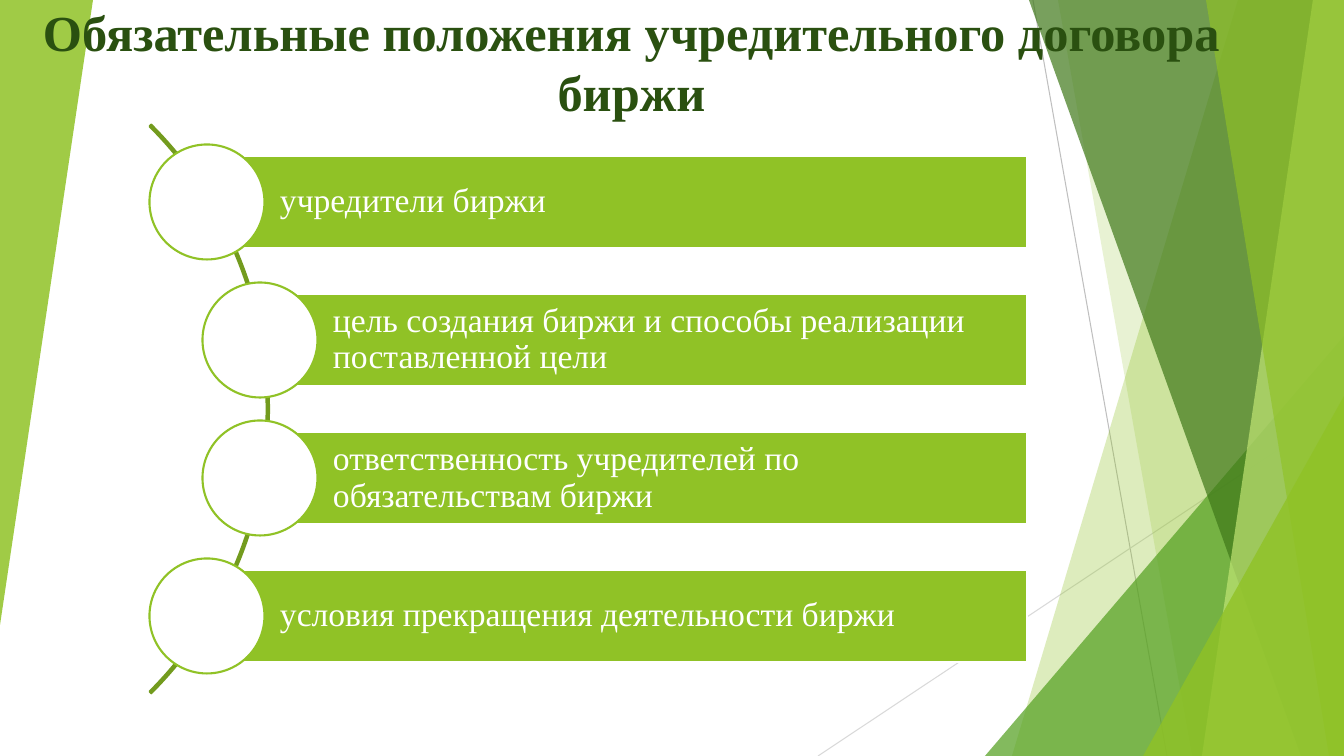
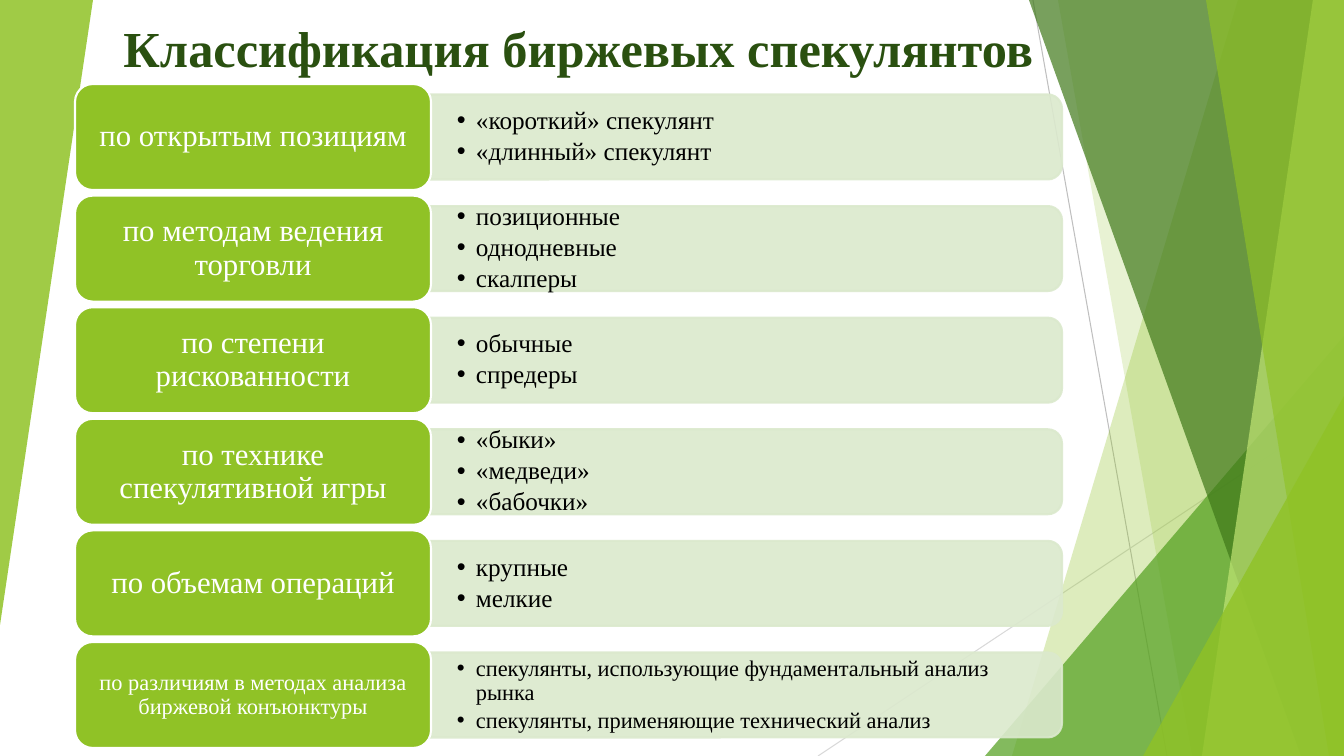
from lxml import etree
from pptx import Presentation
from pptx.dml.color import RGBColor
from pptx.enum import shapes, text
from pptx.oxml.ns import qn
from pptx.util import Emu, Pt

SCALE = 914400 / 100.8
WIDTH, HEIGHT = 1344, 756
FONT = "Times New Roman"
WHITE, BLACK, LIME, OLIVE = "FFFFFF", "000000", "90C226", "739B1E"
TITLE_GREEN, PALE_GREEN = "2A5010", "DBE9CD"
GUIDES = [(1033, 0, 1167, HEIGHT, "BFBFBF"), (WIDTH, 406, 818, HEIGHT, "D9D9D9")]
PANES_BACK = [(1238, 1012, LIME, 30), (1058, 1192, LIME, 20)]
PANES_FRONT = [(1029, 1301, "3F7819", 70), (1313, 1202, "C0E474", 70), (1206, 1329, LIME, 65)]
PROVISIONS = [
    (207, "учредители биржи"),
    (260, "цель создания биржи и способы реализации поставленной цели"),
    (260, "ответственность учредителей по обязательствам биржи"),
    (207, "условия прекращения деятельности биржи"),
]
SPECULATORS = [
    ("по открытым позициям", ["«короткий» спекулянт", "«длинный» спекулянт"], 22, 18),
    ("по методам ведения торговли", ["позиционные", "однодневные", "скалперы"], 22, 18),
    ("по степени рискованности", ["обычные", "спредеры"], 22, 18),
    ("по технике спекулятивной игры", ["«быки»", "«медведи»", "«бабочки»"], 22, 18),
    ("по объемам операций", ["крупные", "мелкие"], 22, 18),
    ("по различиям в методах анализа биржевой конъюнктуры",
     ["спекулянты, использующие фундаментальный анализ рынка",
      "спекулянты, применяющие технический анализ"], 16, 16),
]


def px(length):
    """Turn pixels into EMU."""
    return Emu(round(length * SCALE))


def colour(hex_string):
    """Turn a hex string into a colour."""
    return RGBColor.from_string(hex_string)


def apply(target, formats):
    """Set every attribute named in a dict of format values."""
    for name, value in formats.items():
        setattr(target, name, value)


def paint(fill, hex_string, opacity=100):
    """Fill with one colour at an opacity in percent, or with nothing."""
    if hex_string is None:
        fill.background()
        return
    fill.solid()
    fill.fore_color.rgb = colour(hex_string)
    if opacity < 100:
        tint = fill._xPr.find(qn("a:solidFill"))[0]
        etree.SubElement(tint, qn("a:alpha"), val=str(opacity * 1000))


def style(shape, fill, line=None, opacity=100):
    """Give a shape its fill and outline and no shadow."""
    shape.shadow.inherit = False
    paint(shape.fill, fill, opacity)
    paint(shape.line.fill, line, opacity)
    if line:
        shape.line.width = Pt(1.5)
    return shape


def add_figure(slide, kind, box, fill, line=None, opacity=100, adjustments=()):
    """Add a preset shape in a pixel box."""
    shape = slide.shapes.add_shape(kind, *map(px, box))
    for index, value in enumerate(adjustments):
        shape.adjustments[index] = value
    return style(shape, fill, line, opacity)


def add_bullet(paragraph, indent):
    """Give a paragraph a hanging round bullet."""
    properties = paragraph._p.get_or_add_pPr()
    properties.set("marL", str(px(indent)))
    properties.set("indent", str(-px(indent)))
    etree.SubElement(properties, qn("a:buFont"), typeface="Arial")
    etree.SubElement(properties, qn("a:buChar"), char="•")


def write(shape, lines, size, ink, insets, align=text.PP_ALIGN.LEFT, spacing=0.9,
          anchor=text.MSO_ANCHOR.MIDDLE, bold=False, bullets=False):
    """Write paragraphs into a shape; insets are left, top, right, bottom."""
    frame = shape.text_frame
    left, top, right, bottom = map(px, insets)
    apply(frame, {"word_wrap": True, "vertical_anchor": anchor, "margin_left": left,
                  "margin_top": top, "margin_right": right, "margin_bottom": bottom})
    for index, line in enumerate(lines):
        paragraph = frame.add_paragraph() if index else frame.paragraphs[0]
        apply(paragraph, {"alignment": align, "line_spacing": spacing})
        if bullets:
            paragraph.space_after = Pt(round(size * 0.15, 1))
            add_bullet(paragraph, 19)
        run = paragraph.add_run()
        run.text = line
        apply(run.font, {"name": FONT, "size": Pt(size), "bold": bold})
        run.font.color.rgb = colour(ink)


def add_guide(slide, x1, y1, x2, y2, ink):
    """Add a thin straight line."""
    guide = slide.shapes.add_connector(shapes.MSO_CONNECTOR.STRAIGHT, *map(px, (x1, y1, x2, y2)))
    paint(guide.line.fill, ink)
    guide.line.width = Pt(0.75)
    etree.SubElement(guide._element.spPr, qn("a:effectLst"))


def add_pane(slide, top_x, bottom_x, fill, opacity):
    """Add a slanted pane reaching the right edge of the slide."""
    builder = slide.shapes.build_freeform(top_x, 0, scale=SCALE)
    builder.add_line_segments([(WIDTH, 0), (WIDTH, HEIGHT), (bottom_x, HEIGHT)])
    style(builder.convert_to_shape(), fill, opacity=opacity)


def add_wedge(slide, box, fill, opacity):
    """Add a right-angled triangle with its apex at the right."""
    return add_figure(slide, shapes.MSO_SHAPE.ISOSCELES_TRIANGLE, box, fill,
                      opacity=opacity, adjustments=[1])


def add_backdrop(slide):
    """Draw the green facets that every slide shares."""
    for guide in GUIDES:
        add_guide(slide, *guide)
    for pane in PANES_BACK:
        add_pane(slide, *pane)
    add_wedge(slide, (985, 336, 359, 420), "54A021", 72)
    for pane in PANES_FRONT:
        add_pane(slide, *pane)
    add_wedge(slide, (1143, 396, 201, 360), LIME, 80)
    add_wedge(slide, (0, 0, 93, 625), LIME, 85).rotation = 180


def add_titled_slide(presentation, title, box):
    """Add a slide with the backdrop and a title."""
    slide = presentation.slides.add_slide(presentation.slide_layouts[6])
    add_backdrop(slide)
    write(slide.shapes.add_textbox(*map(px, box)), [title], 36, TITLE_GREEN, (10, 5, 10, 5),
          text.PP_ALIGN.CENTER, 1.0, text.MSO_ANCHOR.BOTTOM, bold=True)
    return slide


def add_provision(slide, left, top, label):
    """Add a bar with a circle centred on its left end."""
    height, diameter = 92, 115
    bar = add_figure(slide, shapes.MSO_SHAPE.RECTANGLE, (left, top, 1027 - left, height),
                     LIME, WHITE)
    write(bar, [label], 24, WHITE, (73, 7, 7, 7))
    circle = (left - diameter / 2, top + (height - diameter) / 2, diameter, diameter)
    add_figure(slide, shapes.MSO_SHAPE.OVAL, circle, WHITE, LIME)


def add_category(slide, top, label, kinds, label_size, kind_size):
    """Add a rounded label with a bulleted panel on its right."""
    left, label_width, label_height = 75, 356, 106
    panel_left, panel_width, panel_height = left + label_width - 1, 632, 85
    middle = top + label_height / 2
    upright = (panel_left + (panel_width - panel_height) / 2, middle - panel_width / 2,
               panel_height, panel_width)
    panel = add_figure(slide, shapes.MSO_SHAPE.ROUND_2_SAME_RECTANGLE, upright,
                       PALE_GREEN, PALE_GREEN, 90)
    panel.rotation = 90
    box = slide.shapes.add_textbox(*map(px, (panel_left, middle - 38, 628, 76)))
    write(box, kinds, kind_size, BLACK, (27, 14, 27, 14), bullets=True)
    plate = add_figure(slide, shapes.MSO_SHAPE.ROUNDED_RECTANGLE,
                       (left, top, label_width, label_height), LIME, WHITE)
    write(plate, [label], label_size, WHITE, (9, 5, 9, 5), text.PP_ALIGN.CENTER)


def build_provisions(presentation):
    """Build the slide on the founding agreement."""
    slide = add_titled_slide(presentation, "Обязательные положения учредительного договора биржи",
                             (19, 53, 1225, 74))
    add_figure(slide, shapes.MSO_SHAPE.BLOCK_ARC, (-535, 7, 804, 804), None, OLIVE,
               adjustments=[189, 27, 0.003])
    for index, (left, label) in enumerate(PROVISIONS):
        add_provision(slide, left, 156 + 138 * index, label)


def build_speculators(presentation):
    """Build the slide on the kinds of speculators."""
    slide = add_titled_slide(presentation, "Классификация биржевых спекулянтов",
                             (57, 22, 1043, 61))
    for index, category in enumerate(SPECULATORS):
        add_category(slide, 84 + 111.6 * index, *category)


def main():
    """Build and save the presentation."""
    presentation = Presentation()
    apply(presentation, {"slide_width": px(WIDTH), "slide_height": px(HEIGHT)})
    build_provisions(presentation)
    build_speculators(presentation)
    presentation.save("out.pptx")


if __name__ == "__main__":
    main()
